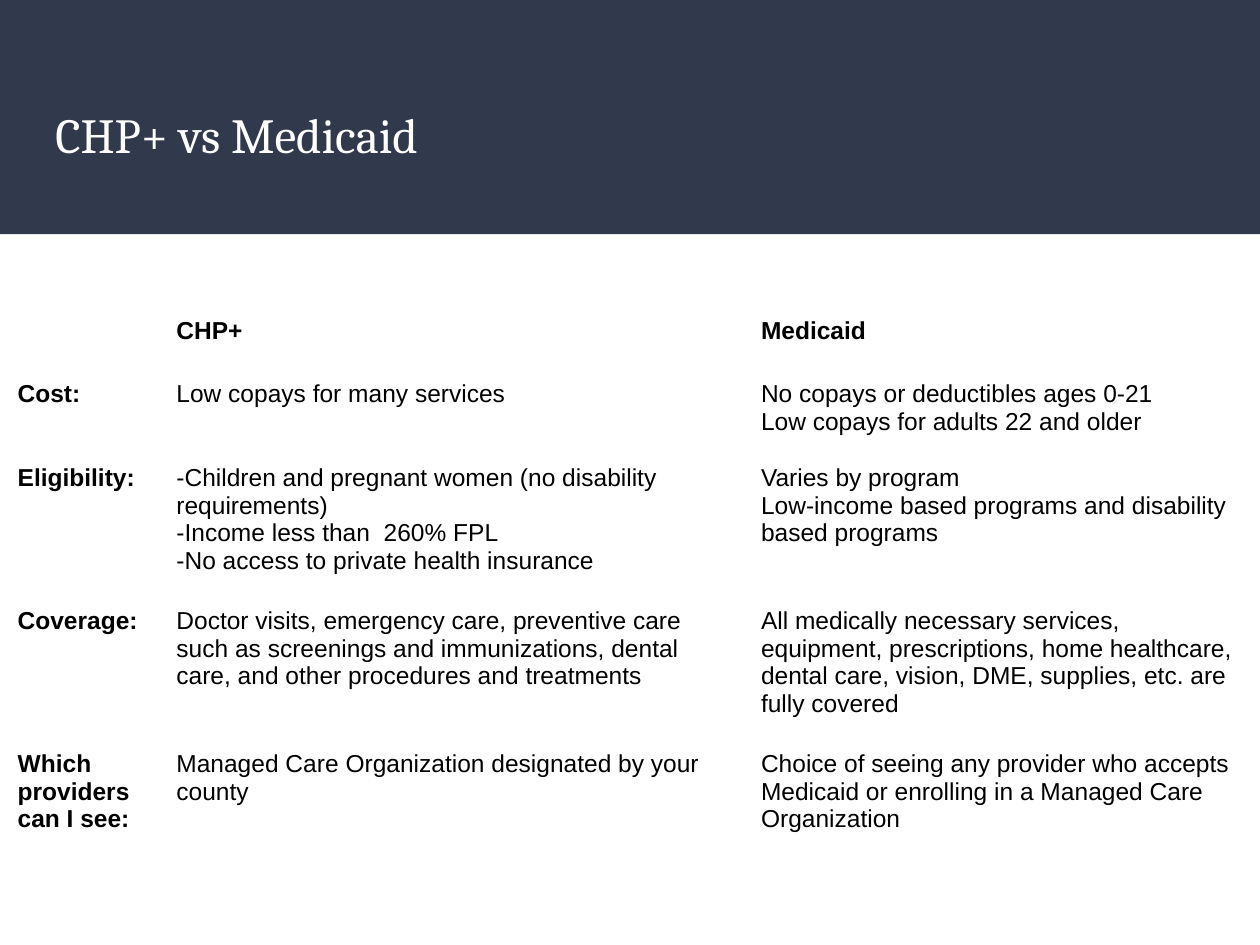
from pptx import Presentation
from pptx.dml.color import RGBColor
from pptx.enum.shapes import MSO_SHAPE
from pptx.enum.text import MSO_ANCHOR
from pptx.util import Inches, Pt

COLORS = {"band": "31394D", "title": "FFFFFF", "text": "000000"}
MARGIN = 0.1
COL_WIDTHS = [1.26, 4.64, 4.02]
ROW_HEIGHTS = [0.48, 0.64, 1.08, 1.08, 0.86]
ROWS = [
    ["", "CHP+", "Medicaid"],
    ["Cost:", "Low copays for many services",
     "No copays or deductibles ages 0-21\nLow copays for adults 22 and older"],
    ["Eligibility:",
     "-Children and pregnant women (no disability requirements)\n"
     "-Income less than  260% FPL\n"
     "-No access to private health insurance",
     "Varies by program\n"
     "Low-income based programs and disability based programs"],
    ["Coverage:",
     "Doctor visits, emergency care, preventive care such as screenings and "
     "immunizations, dental care, and other procedures and treatments",
     "All medically necessary services, equipment, prescriptions, home "
     "healthcare, dental care, vision, DME, supplies, etc. are fully covered"],
    ["Which providers can I see:",
     "Managed Care Organization designated by your county",
     "Choice of seeing any provider who accepts Medicaid or enrolling in a "
     "Managed Care Organization"],
]


def set_margins(box):
    box.margin_left = box.margin_right = Inches(MARGIN)
    box.margin_top = box.margin_bottom = Inches(MARGIN)


def write_text(tf, text, size=14, font="Arial", color="text", bold=False):
    """Fill a text frame, one paragraph for each line of text."""
    tf.word_wrap = True
    for i, line in enumerate(text.split("\n")):
        p = tf.add_paragraph() if i else tf.paragraphs[0]
        r = p.add_run()
        r.text = line
        r.font.size = Pt(size)
        r.font.name = font
        r.font.bold = bold
        r.font.color.rgb = RGBColor.from_string(COLORS[color])


def add_header(s, left, top, width, height):
    band = s.shapes.add_shape(MSO_SHAPE.RECTANGLE, Inches(left), Inches(top),
                              Inches(width), Inches(height))
    band.shadow.inherit = False
    band.fill.solid()
    band.fill.fore_color.rgb = RGBColor.from_string(COLORS["band"])
    band.line.fill.background()

    title = s.shapes.add_textbox(Inches(left + 0.34), Inches(top + 0.73),
                                 Inches(width - 0.68), Inches(0.91))
    tf = title.text_frame
    set_margins(tf)
    tf.vertical_anchor = MSO_ANCHOR.TOP
    write_text(tf, "CHP+ vs Medicaid", size=28, font="Cambria", color="title")


def add_comparison(s, left, top):
    table = s.shapes.add_table(
        len(ROWS), len(COL_WIDTHS), Inches(left), Inches(top),
        Inches(sum(COL_WIDTHS)), Inches(sum(ROW_HEIGHTS))).table
    table.first_row = table.horz_banding = False
    for col, width in zip(table.columns, COL_WIDTHS):
        col.width = Inches(width)
    # "No Style, No Grid" keeps the cells free of borders
    table._tbl.tblPr.find("{*}tableStyleId").text = (
        "{2D5ABB26-0587-4C30-8999-92F81FD0307C}")
    for i, (row, height) in enumerate(zip(table.rows, ROW_HEIGHTS)):
        row.height = Inches(height)
        for j, cell in enumerate(row.cells):
            cell.fill.background()
            set_margins(cell)
            if ROWS[i][j]:
                write_text(cell.text_frame, ROWS[i][j], bold=i == 0 or j == 0)


def main():
    prs = Presentation()
    prs.slide_width, prs.slide_height = Inches(10), Inches(7.5)
    s = prs.slides.add_slide(prs.slide_layouts[6])
    add_header(s, 0, 0, 10, 1.86)
    add_comparison(s, 0.04, 2.42)
    prs.save("out.pptx")


if __name__ == "__main__":
    main()
